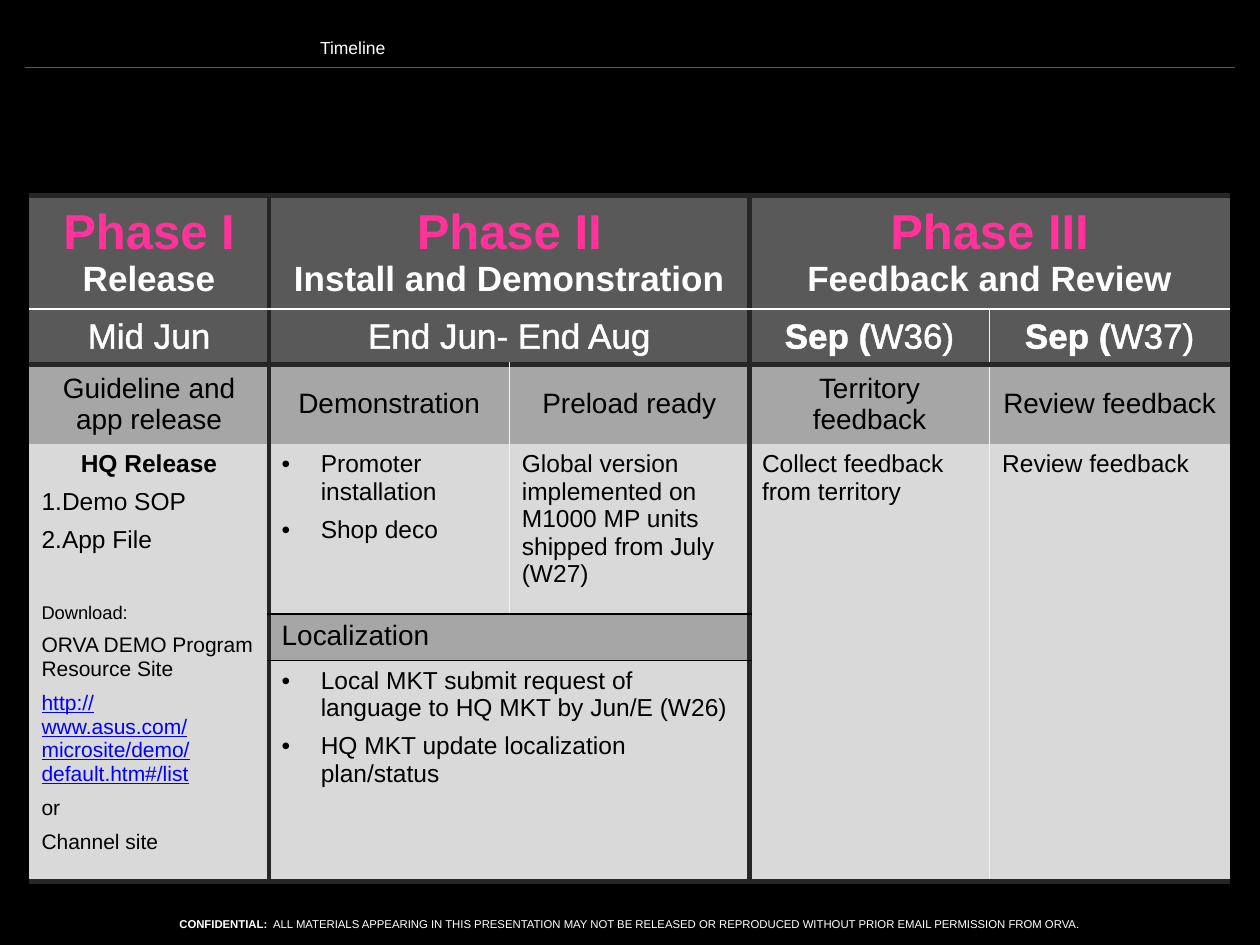
import dataclasses
import lxml.etree
import pptx
import pptx.dml.color
import pptx.enum.shapes
import pptx.enum.text
import pptx.oxml.ns
import pptx.util

Inches = pptx.util.Inches
Pt = pptx.util.Pt
ALIGN = pptx.enum.text.PP_ALIGN
ANCHOR = pptx.enum.text.MSO_ANCHOR


@dataclasses.dataclass(frozen=True)
class Theme:
    font: str = "Arial"
    black: str = "000000"
    white: str = "FFFFFF"
    accent: str = "FF3399"
    link: str = "0000FF"
    header: str = "595959"
    subheader: str = "A6A6A6"
    body: str = "D9D9D9"
    frame: str = "262626"
    divider: str = "F2F2F2"
    phase_size: float = 28
    date_size: float = 20
    task_size: float = 16
    text_size: float = 14
    small_size: float = 12
    label_size: float = 10.5
    title_size: float = 10
    footer_size: float = 6.5


THEME = Theme()


@dataclasses.dataclass
class Span:
    text: str
    size: float = THEME.text_size
    color: str = THEME.black
    bold: bool = False
    underline: bool = False
    outline: str = ""


@dataclasses.dataclass
class Para:
    spans: list
    align: int = ALIGN.LEFT
    before: float = 6
    bullet: str = ""


def rgb(color):
    return pptx.dml.color.RGBColor.from_string(color)


def child(parent, tag, **attributes):
    return lxml.etree.SubElement(parent, pptx.oxml.ns.qn(tag), attributes)


def add_bullet(para, kind):
    properties = para._p.get_or_add_pPr()
    left, indent = (0, -0.25) if kind == "number" else (0.31, -0.31)
    properties.set("marL", str(Inches(left)))
    properties.set("indent", str(Inches(indent)))
    if kind == "number":
        child(properties, "a:buAutoNum", type="arabicPeriod")
    else:
        child(properties, "a:buFont", typeface=THEME.font)
        child(properties, "a:buChar", char="•")


def write(frame, paras):
    for index, content in enumerate(paras):
        para = frame.add_paragraph() if index else frame.paragraphs[0]
        para.alignment = content.align
        para.space_before = Pt(content.before if index else 0)
        if content.bullet:
            add_bullet(para, content.bullet)
        for span in content.spans:
            run = para.add_run()
            run.text = span.text
            font = run.font
            font.name, font.size = THEME.font, Pt(span.size)
            font.bold, font.underline = span.bold, span.underline
            font.color.rgb = rgb(span.color)
            if span.outline:
                line = lxml.etree.Element(pptx.oxml.ns.qn("a:ln"), w=str(Pt(0.75)))
                child(child(line, "a:solidFill"), "a:srgbClr", val=span.outline)
                run._r.get_or_add_rPr().insert(0, line)


def centered(*spans):
    return Para(list(spans), ALIGN.CENTER, 0)


def phase(number, name):
    return [
        centered(Span(f"Phase {number}", THEME.phase_size, THEME.accent, True)),
        centered(Span(name, THEME.date_size, THEME.white, True)),
    ]


def date(text, month=""):
    parts = [(month, True), (text, False)]
    return [centered(*[Span(part, THEME.date_size, THEME.white, bold, outline=THEME.white)
                       for part, bold in parts if part])]


def task(text):
    return [centered(Span(text, THEME.task_size))]


def plain(text):
    return [Para([Span(text)])]


def bullets(*items):
    return [Para([Span(item)], bullet="dot") for item in items]


def release_notes():
    small = THEME.small_size
    return [
        centered(Span("HQ Release", bold=True)),
        *[Para([Span(item)], bullet="number") for item in ("Demo SOP", "App File")],
        Para([Span("Download:", THEME.label_size)], before=28),
        Para([Span("ORVA DEMO Program Resource Site", small)]),
        Para([Span("http://www.asus.com/microsite/demo/default.htm#/list", small,
                   THEME.link, underline=True)]),
        Para([Span("or", small)]),
        Para([Span("Channel site", small)]),
    ]


def set_border(cell, side, rule):
    properties = cell._tc.get_or_add_tcPr()
    color, width = rule or (THEME.black, 0)
    line = lxml.etree.Element(pptx.oxml.ns.qn(f"a:{side}"), w=str(Pt(width)))
    if rule:
        child(child(line, "a:solidFill"), "a:srgbClr", val=color)
    else:
        child(line, "a:noFill")
    properties.insert("lnL lnR lnT lnB".split().index(side), line)


def column_rule(column):
    if column in (0, 5):
        return None
    return (THEME.frame, 3) if column in (1, 3) else (THEME.divider, 0.25)


def row_rule(row):
    thick, thin = (THEME.frame, 3), (THEME.black, 1)
    return [thick, (THEME.white, 1), thick, None, thin, thin, thick][row]


def add_timeline(page, left, top, width):
    heights = [0.9, 0.44, 0.63, 1.35, 0.37, 1.75]
    blocks = [
        (0, 0, 1, 1, phase("I", "Release")),
        (0, 1, 1, 2, phase("II", "Install and Demonstration")),
        (0, 3, 1, 2, phase("III", "Feedback and Review")),
        (1, 0, 1, 1, date("Mid Jun")),
        (1, 1, 1, 2, date("End Jun- End Aug")),
        (1, 3, 1, 1, date("W36)", "Sep (")),
        (1, 4, 1, 1, date("W37)", "Sep (")),
        (2, 0, 1, 1, task("Guideline and app release")),
        (2, 1, 1, 1, task("Demonstration")),
        (2, 2, 1, 1, task("Preload ready")),
        (2, 3, 1, 1, task("Territory feedback")),
        (2, 4, 1, 1, task("Review feedback")),
        (3, 0, 3, 1, release_notes()),
        (3, 1, 1, 1, bullets("Promoter installation", "Shop deco")),
        (3, 2, 1, 1, plain("Global version implemented on M1000 MP units shipped from July (W27)")),
        (3, 3, 3, 1, plain("Collect feedback from territory")),
        (3, 4, 3, 1, plain("Review feedback")),
        (4, 1, 1, 2, [Para([Span("Localization", THEME.task_size)])]),
        (5, 1, 1, 2, bullets("Local MKT submit request of language to HQ MKT by Jun/E (W26)",
                             "HQ MKT update localization plan/status")),
    ]
    fills = [THEME.header, THEME.header, THEME.subheader, THEME.body, THEME.subheader, THEME.body]
    table = page.shapes.add_table(6, 5, left, top, width, Inches(sum(heights))).table
    table.first_row = table.horz_banding = False
    for column in table.columns:
        column.width = width // 5
    for row, height in zip(table.rows, heights):
        row.height = Inches(height)
    for row, column, rows, columns, paras in blocks:
        cell = table.cell(row, column)
        if rows * columns > 1:
            cell.merge(table.cell(row + rows - 1, column + columns - 1))
        cell.fill.solid()
        cell.fill.fore_color.rgb = rgb(fills[row])
        cell.vertical_anchor = ANCHOR.MIDDLE if row < 3 else ANCHOR.TOP
        set_border(cell, "lnL", column_rule(column))
        set_border(cell, "lnR", column_rule(column + columns))
        set_border(cell, "lnT", row_rule(row))
        set_border(cell, "lnB", row_rule(row + rows))
        write(cell.text_frame, paras)


def add_heading(page, left, top, width, height):
    title = page.shapes.title
    title.left, title.top, title.width, title.height = left, top, width, height
    frame = title.text_frame
    frame.auto_size = pptx.enum.text.MSO_AUTO_SIZE.NONE
    frame.vertical_anchor = ANCHOR.TOP
    write(frame, [Para([Span("Timeline", THEME.title_size, THEME.white)])])
    line = page.shapes.add_connector(pptx.enum.shapes.MSO_CONNECTOR.STRAIGHT,
                                     Inches(0.2), Inches(0.53), Inches(9.8), Inches(0.53))
    line.line.color.rgb = rgb(THEME.header)
    line.line.width = Pt(0.25)
    child(line._element.spPr, "a:effectLst")


def add_footer(page, left, top, width, height):
    frame = page.shapes.add_textbox(left, top, width, height).text_frame
    frame.word_wrap = True
    notice = ("\u00a0ALL MATERIALS APPEARING IN THIS PRESENTATION MAY NOT BE RELEASED OR "
              "REPRODUCED WITHOUT PRIOR EMAIL PERMISSION FROM ORVA.").replace("\u00a0", " ")
    write(frame, [centered(Span("CONFIDENTIAL: ", THEME.footer_size, THEME.white, True),
                           Span(notice, THEME.footer_size, THEME.white))])


def main():
    deck = pptx.Presentation()
    deck.slide_width, deck.slide_height = Inches(10), Inches(7.5)
    page = deck.slides.add_slide(deck.slide_layouts[5])
    page.background.fill.solid()
    page.background.fill.fore_color.rgb = rgb(THEME.black)
    add_footer(page, Inches(0), Inches(7.23), Inches(10), Inches(0.21))
    add_heading(page, Inches(2.44), Inches(0.24), Inches(5.04), Inches(0.27))
    add_timeline(page, Inches(0.23), Inches(1.55), Inches(9.53))
    deck.save("out.pptx")


if __name__ == "__main__":
    main()
